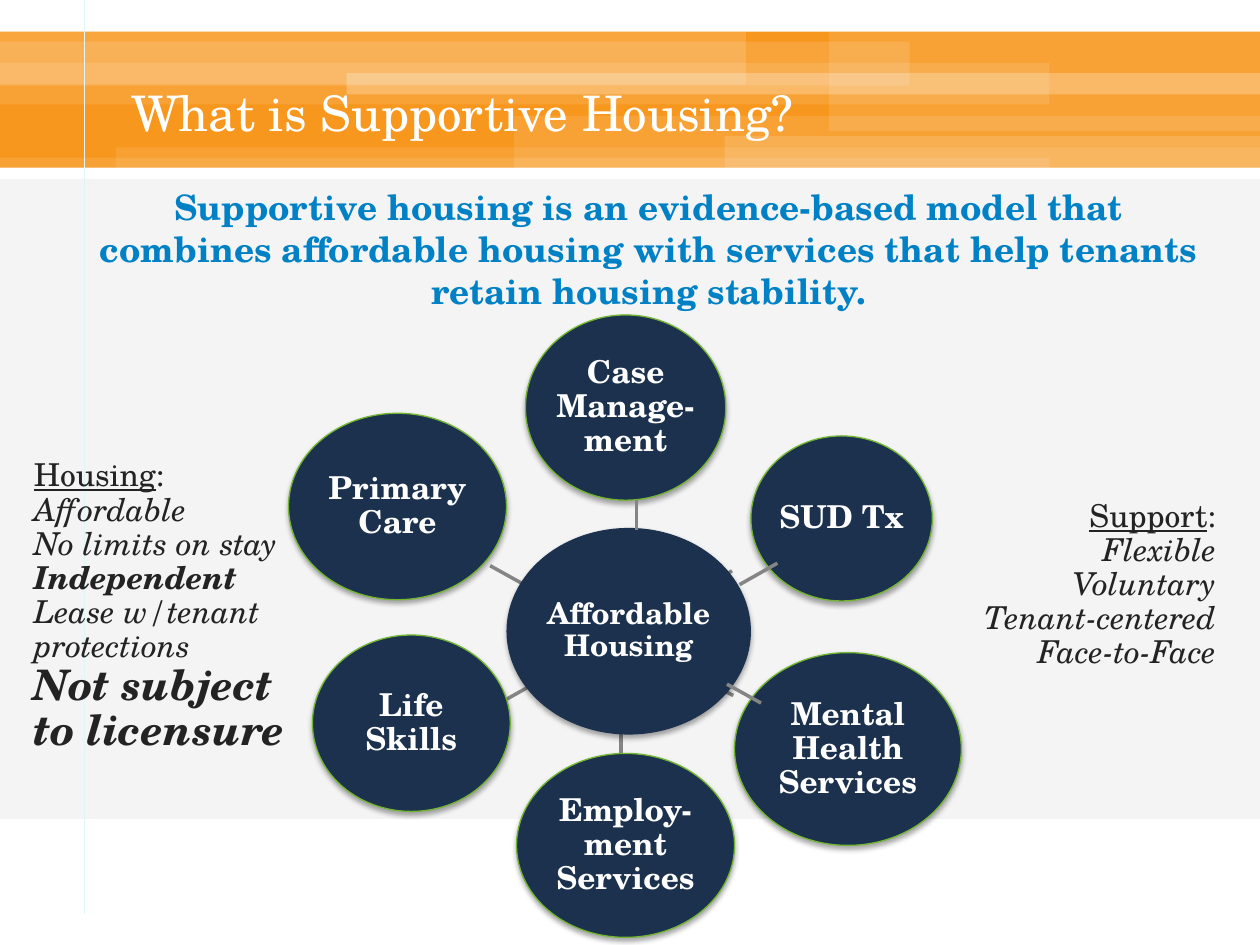
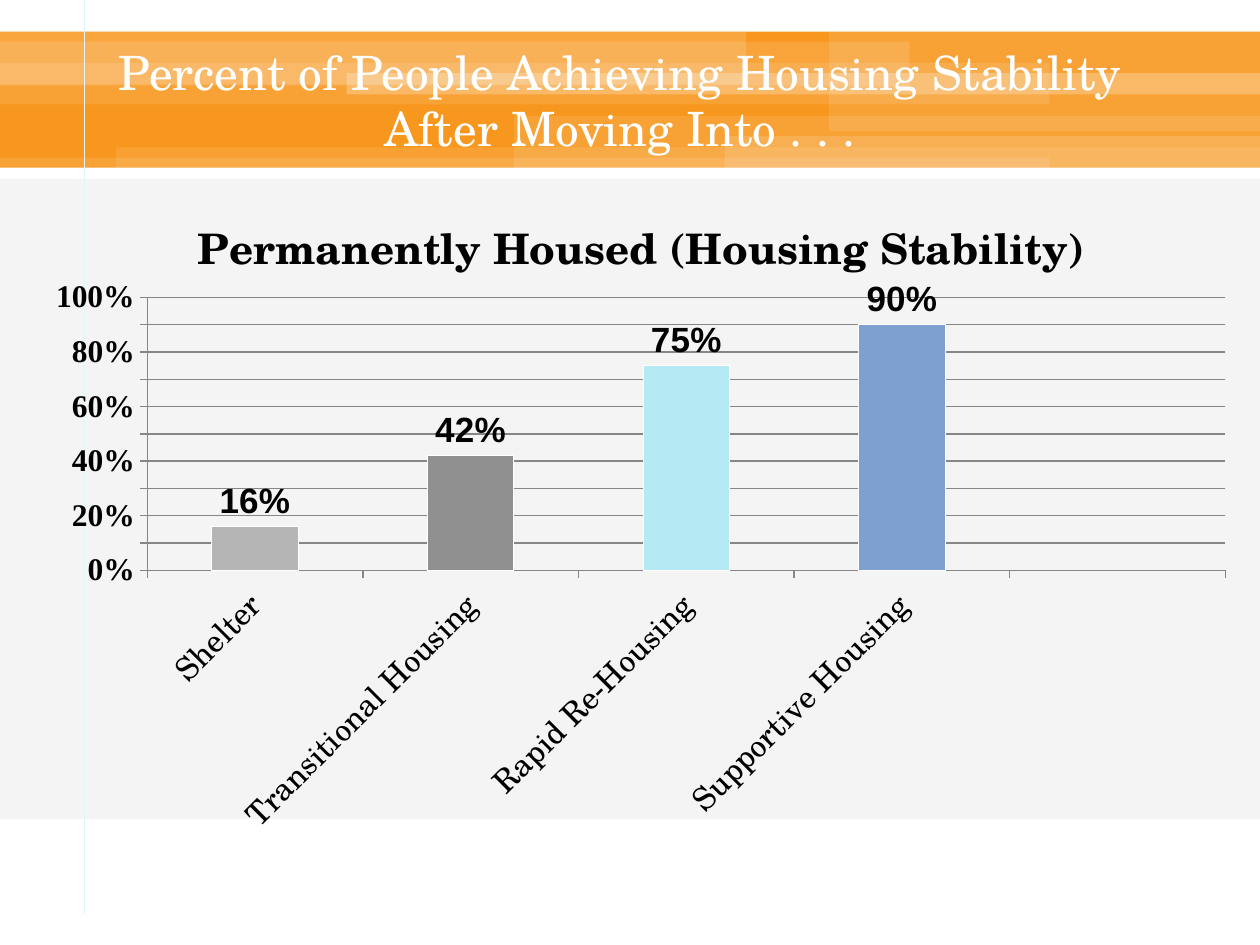
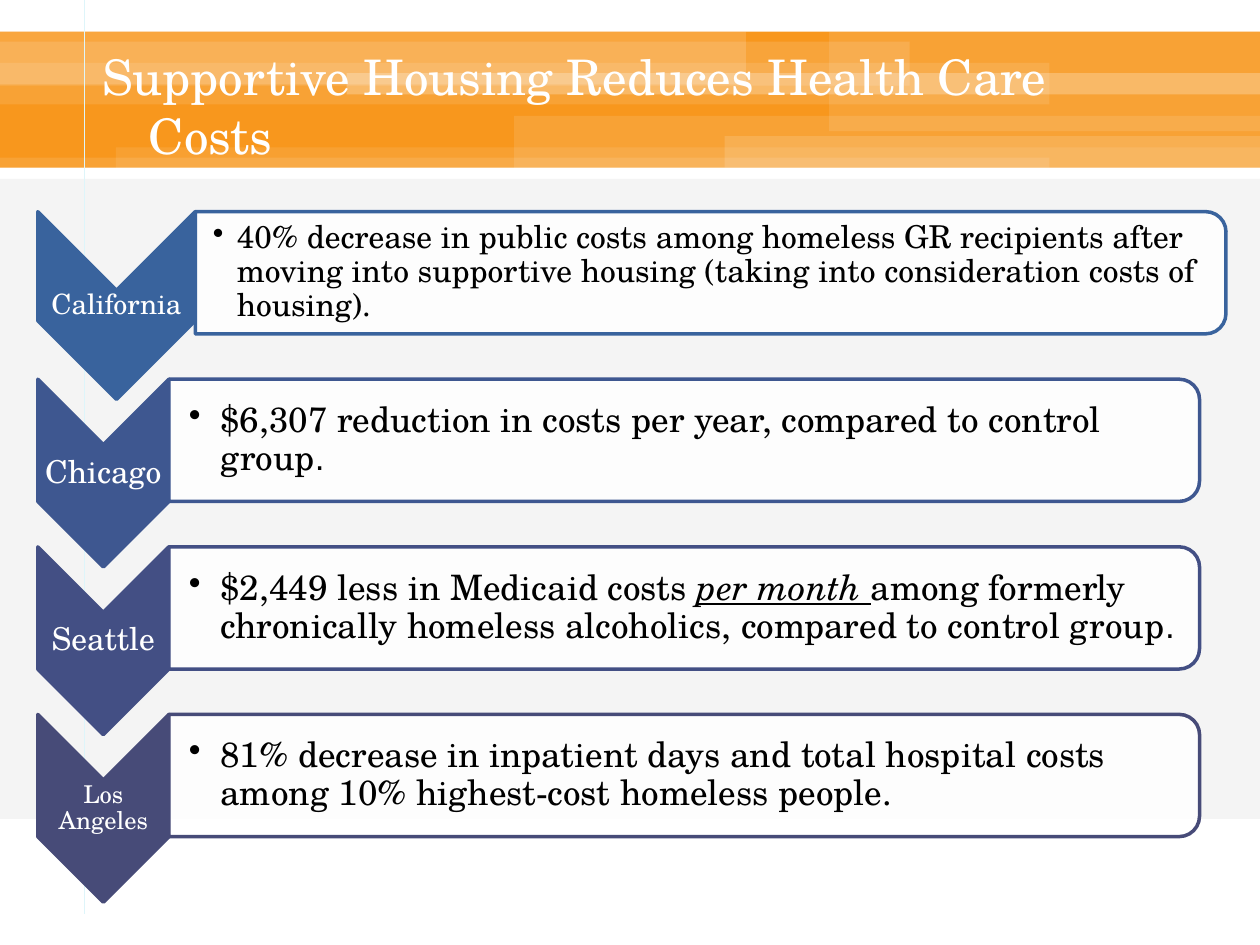
from dataclasses import dataclass
from typing import NamedTuple, Optional

from lxml.etree import SubElement
from pptx import Presentation
from pptx.chart.data import CategoryChartData
from pptx.dml.color import RGBColor
from pptx.enum.chart import XL_CHART_TYPE as ChartType
from pptx.enum.chart import XL_LABEL_POSITION as LabelPosition
from pptx.enum.chart import XL_TICK_MARK as TickMark
from pptx.enum.shapes import MSO_CONNECTOR as Connector
from pptx.enum.shapes import MSO_SHAPE as Preset
from pptx.enum.text import MSO_ANCHOR as Anchor
from pptx.enum.text import MSO_AUTO_SIZE as AutoSize
from pptx.enum.text import PP_ALIGN as Align
from pptx.oxml.ns import qn
from pptx.util import Inches, Pt


@dataclass(frozen=True)
class Theme:
    face: str = "TeX Gyre Schola"
    label_face: str = "Arial"
    axis_face: str = "Times New Roman"
    white: str = "FFFFFF"
    black: str = "000000"
    ink: str = "232323"
    panel: str = "F2F2F2"
    orange: str = "F8971D"
    guide: str = "DEF5FA"
    blue: str = "0081C6"
    navy: str = "1C314E"
    green: str = "73B632"
    spoke: str = "848584"
    axis: str = "868686"
    series: str = "2DA2BF"
    bars: tuple = ("B5B5B5", "909090", "B5E9F4", "7DA0D0")
    title: float = 28
    long_title: float = 27
    large: float = 24
    lead: float = 20
    body: float = 18
    hub: float = 17
    label: float = 16
    small_label: float = 14


THEME = Theme()


class Area(NamedTuple):
    left: float
    top: float
    width: float
    height: float

    def lengths(self) -> list:
        return [Inches(value) for value in self]


class Band(NamedTuple):
    area: Area
    color: str
    opacity: int = 100


class Span(NamedTuple):
    text: str
    size: float = THEME.body
    color: str = THEME.ink
    bold: bool = False
    italic: bool = False
    underline: bool = False
    face: str = THEME.face


class Bubble(NamedTuple):
    text: str
    area: Area


class Spoke(NamedTuple):
    x1: float
    y1: float
    x2: float
    y2: float


class Finding(NamedTuple):
    place: str
    label_size: float
    chevron_width: float
    color: str
    inset: float
    indent: float
    spans: list


BANDS = [
    Band(Area(0, 1.42, 10, 5.08), THEME.panel, 83),
    Band(Area(0, 0.25, 10, 1.08), THEME.orange),
    Band(Area(0, 0.33, 7.22, 0.35), THEME.white, 13),
    Band(Area(2.75, 0.58, 7.25, 0.17), THEME.white, 25),
    Band(Area(0.92, 1.17, 9.08, 0.17), THEME.white, 9),
    Band(Area(0, 1.25, 8.33, 0.08), THEME.white, 11),
    Band(Area(0, 0.5, 8.33, 0.33), THEME.white, 11),
    Band(Area(6.58, 0.25, 3.42, 0.79), THEME.white, 11),
    Band(Area(4.08, 0.92, 5.92, 0.42), THEME.white, 11),
    Band(Area(0, 0.25, 5.92, 0.42), THEME.white, 15),
    Band(Area(5.75, 1.08, 4.25, 0.25), THEME.white, 14),
]

HUB = Bubble("Affordable Housing", Area(4.02, 4.19, 1.94, 1.64))
SERVICES = [
    Bubble("Employ-ment Services", Area(4.1, 5.98, 1.73, 1.46)),
    Bubble("Case Manage-ment", Area(4.17, 2.5, 1.59, 1.47)),
    Bubble("Primary Care", Area(2.29, 3.28, 1.73, 1.48)),
    Bubble("Mental Health Services", Area(5.83, 5.18, 1.8, 1.53)),
    Bubble("SUD Tx", Area(5.96, 3.46, 1.44, 1.31)),
    Bubble("Life Skills", Area(2.48, 5.04, 1.57, 1.4)),
]
BACK_SPOKES = [
    Spoke(5.7, 4.6, 5.81, 4.53),
    Spoke(5.7, 5.46, 5.82, 5.52),
    Spoke(4.93, 5.82, 4.93, 5.98),
    Spoke(4.18, 5.46, 4.02, 5.55),
    Spoke(4.16, 4.64, 3.89, 4.49),
]
FRONT_SPOKES = [
    Spoke(5.05, 3.97, 5.05, 4.21),
    Spoke(6.17, 4.47, 5.87, 4.64),
    Spoke(6.04, 5.58, 5.77, 5.43),
]

HOUSING = [
    [Span("Housing", underline=True), Span(": "), Span("Affordable", italic=True)],
    [Span("No limits on stay", italic=True)],
    [Span("Independent", bold=True, italic=True)],
    [Span("Lease w/tenant protections", italic=True)],
    [Span("Not subject to licensure", THEME.large, bold=True, italic=True)],
]
SUPPORT = [[Span("Support", underline=True), Span(":")]] + [
    [Span(text, italic=True)]
    for text in ("Flexible", "Voluntary", "Tenant-centered", "Face-to-Face")
]

LEAD = (THEME.lead, THEME.black)
FULL_STOP = Span(".", *LEAD, face=THEME.label_face)
FINDINGS = [
    Finding("California", THEME.label, 1.25, "39639D", 0.14, 0.19, [
        Span("40% decrease in public costs among homeless GR recipients after moving "
             "into supportive housing (taking into consideration costs of housing).",
             THEME.body, THEME.black)]),
    Finding("Chicago", THEME.body, 1.04, "3E5790", 0.16, 0.25, [
        Span("$6,307 reduction in costs per year, compared to control group", *LEAD),
        FULL_STOP]),
    Finding("Seattle", THEME.body, 1.04, "434F84", 0.16, 0.25, [
        Span("$2,449 less in Medicaid costs ", *LEAD),
        Span("per month ", *LEAD, italic=True, underline=True),
        Span("among formerly chronically homeless alcoholics, "
             "compared to control group", *LEAD),
        FULL_STOP]),
    Finding("Los Angeles", THEME.small_label, 1.04, "474B78", 0.16, 0.25, [
        Span("81% decrease in inpatient days and total hospital costs "
             "among 10% highest-cost homeless people.", *LEAD)]),
]


def rgb(color: str) -> RGBColor:
    return RGBColor.from_string(color)


def style_font(font, face: str, size: float, color: str, bold: bool = False) -> None:
    font.name, font.size, font.bold = face, Pt(size), bold
    font.color.rgb = rgb(color)


def write(para, spans: list, align=Align.LEFT, spacing: Optional[float] = None) -> None:
    para.alignment = align
    if spacing:
        para.line_spacing = spacing
    for span in spans:
        run = para.add_run()
        run.text = span.text
        style_font(run.font, span.face, span.size, span.color, span.bold)
        run.font.italic = span.italic
        run.font.underline = span.underline


def set_indent(para, margin: float, first: float) -> None:
    props = para._p.get_or_add_pPr()
    props.set("marL", str(Inches(margin)))
    props.set("indent", str(Inches(first)))


def set_margins(frame, left: float, top: float, right: float, bottom: float) -> None:
    frame.margin_left, frame.margin_top = Inches(left), Inches(top)
    frame.margin_right, frame.margin_bottom = Inches(right), Inches(bottom)


def add_box(page, area: Area, paragraphs: list, align=Align.LEFT,
            spacing: Optional[float] = None):
    frame = page.shapes.add_textbox(*area.lengths()).text_frame
    frame.word_wrap = True
    for index, spans in enumerate(paragraphs):
        para = frame.add_paragraph() if index else frame.paragraphs[0]
        write(para, spans, align, spacing)
    return frame


def add_preset(page, preset, area: Area, fill: str, opacity: int = 100,
               line: Optional[str] = None, weight: float = 0):
    shape = page.shapes.add_shape(preset, *area.lengths())
    shape.shadow.inherit = False
    shape.fill.solid()
    shape.fill.fore_color.rgb = rgb(fill)
    if opacity < 100:
        color = shape.element.spPr.find(qn("a:solidFill"))[0]
        SubElement(color, qn("a:alpha"), val=str(opacity * 1000))
    if line:
        shape.line.color.rgb = rgb(line)
        shape.line.width = Pt(weight)
    else:
        shape.line.fill.background()
    return shape


def add_line(page, spoke: Spoke, color: str, weight: float):
    ends = [Inches(value) for value in spoke]
    line = page.shapes.add_connector(Connector.STRAIGHT, *ends)
    line.line.color.rgb = rgb(color)
    line.line.width = Pt(weight)
    SubElement(line.element.spPr, qn("a:effectLst"))
    return line


def add_bubble(page, bubble: Bubble, size: float, line: Optional[str] = None) -> None:
    shape = add_preset(page, Preset.OVAL, bubble.area, THEME.navy, line=line, weight=0.75)
    effects = shape.element.spPr.find(qn("a:effectLst"))
    shadow = SubElement(effects, qn("a:outerShdw"), blurRad=str(Pt(3.1)),
                        dist=str(Pt(1.8)), dir="5400000", rotWithShape="0")
    color = SubElement(shadow, qn("a:srgbClr"), val=THEME.black)
    SubElement(color, qn("a:alpha"), val="35000")
    frame = shape.text_frame
    frame.word_wrap = True
    frame.vertical_anchor = Anchor.MIDDLE
    set_margins(frame, 0, 0, 0, 0)
    write(frame.paragraphs[0], [Span(bubble.text, size, THEME.white, bold=True)],
          Align.CENTER, 0.9)


def add_title(page, text: str, area: Area, size: float, align=Align.LEFT):
    title = page.shapes.title
    title.left, title.top, title.width, title.height = area.lengths()
    frame = title.text_frame
    frame.word_wrap = True
    frame.auto_size = AutoSize.NONE
    frame.vertical_anchor = Anchor.MIDDLE
    write(frame.paragraphs[0], [Span(text, size, THEME.white)], align)
    if align == Align.LEFT:
        set_indent(frame.paragraphs[0], 0.5, -0.37)
    return frame


def dress_layout(layout, page) -> None:
    for holder in list(layout.placeholders)[1:]:
        layout.shapes.element.remove(holder.element)
    parts = [add_preset(page, Preset.RECTANGLE, *band) for band in BANDS]
    parts.append(add_line(page, Spoke(0.67, 0, 0.67, 7.25), THEME.guide, 0.25))
    for index, part in enumerate(parts, start=2):
        layout.shapes.element.insert(index, part.element)


def build_model_page(page) -> None:
    add_title(page, "What is Supportive Housing?", Area(0.81, 0.6, 7.48, 0.58), THEME.title)
    statement = add_box(page, Area(0.44, 1.42, 9.29, 1.45), [[
        Span("Supportive housing is an evidence-based model that combines affordable "
             "housing with services that help tenants retain housing stability.",
             THEME.lead, THEME.blue, bold=True)]], Align.CENTER)
    set_indent(statement.paragraphs[0], 0.13, 0)
    add_box(page, Area(0.17, 3.6, 2.35, 2.46), HOUSING, spacing=0.9)
    add_box(page, Area(7.49, 3.92, 2.26, 1.46), SUPPORT, Align.RIGHT, 0.9)
    for spoke in BACK_SPOKES:
        add_line(page, spoke, THEME.spoke, 2)
    for bubble in SERVICES:
        add_bubble(page, bubble, THEME.body, THEME.green)
    add_bubble(page, HUB, THEME.hub)
    for spoke in FRONT_SPOKES:
        add_line(page, spoke, THEME.spoke, 2)


def add_layout(parent, index: int, **values: float) -> None:
    for old in parent.findall(qn("c:layout")):
        parent.remove(old)
    layout = parent.makeelement(qn("c:layout"))
    parent.insert(index, layout)
    manual = SubElement(layout, qn("c:manualLayout"))
    if "w" in values:
        SubElement(manual, qn("c:layoutTarget"), val="inner")
    for side in ("xMode", "yMode"):
        SubElement(manual, qn(f"c:{side}"), val="edge")
    for name, value in values.items():
        SubElement(manual, qn(f"c:{name}"), val=str(value))


def build_chart_page(page) -> None:
    frame = add_title(page, "Percent of People Achieving Housing Stability "
                      "After Moving Into . . .", Area(0.42, 0.25, 9, 1.08),
                      THEME.long_title, Align.CENTER)
    set_margins(frame, 0.1, 0.06, 0.1, 0.06)
    data = CategoryChartData(number_format="0%")
    data.categories = ["Shelter", "Transitional Housing", "Rapid Re-Housing",
                       "Supportive Housing", ""]
    data.add_series("Series 1", [0.16, 0.42, 0.75, 0.9, None])
    area = Area(0.25, 1.33, 9.67, 5.42)
    chart = page.shapes.add_chart(ChartType.COLUMN_CLUSTERED, *area.lengths(), data).chart
    style_font(chart.font, THEME.label_face, 10, THEME.black)
    chart.has_legend = False
    chart.has_title = True
    heading = chart.chart_title
    write(heading.text_frame.paragraphs[0],
          [Span("Permanently Housed (Housing Stability)", THEME.large, THEME.black, bold=True)],
          Align.CENTER)
    add_layout(heading._element, 1, x=0.13, y=0.05)
    add_layout(chart._chartSpace.chart.plotArea, 0, x=0.095, y=0.19, w=0.885, h=0.4)

    values, places = chart.value_axis, chart.category_axis
    style_font(values.tick_labels.font, THEME.axis_face, THEME.body, THEME.black, True)
    style_font(places.tick_labels.font, THEME.face, THEME.body, THEME.black)
    places._element.find(qn("c:txPr")).find(qn("a:bodyPr")).set("rot", "-2700000")
    values.minimum_scale, values.maximum_scale, values.major_unit = 0, 1, 0.1
    values.tick_labels.number_format = "0%"
    values.tick_labels.number_format_is_linked = False
    values.has_major_gridlines = True
    values.major_gridlines.format.line.color.rgb = rgb(THEME.axis)
    for axis in (values, places):
        axis.major_tick_mark = TickMark.OUTSIDE
        axis.format.line.color.rgb = rgb(THEME.axis)

    plot = chart.plots[0]
    plot.vary_by_categories = False
    plot.gap_width = 150
    series = plot.series[0]
    series.format.fill.solid()
    series.format.fill.fore_color.rgb = rgb(THEME.series)
    for index, color in enumerate(THEME.bars):
        bar = series.points[index].format
        bar.fill.solid()
        bar.fill.fore_color.rgb = rgb(color)
        bar.line.color.rgb = rgb(THEME.white)
    labels = series.data_labels
    labels.show_value = True
    labels.position = LabelPosition.OUTSIDE_END
    labels.number_format = "0%"
    labels.number_format_is_linked = False
    style_font(labels.font, THEME.label_face, THEME.lead, THEME.black, True)


def turned(area: Area) -> Area:
    shift = (area.width - area.height) / 2
    return Area(area.left + shift, area.top - shift, area.height, area.width)


def add_finding(page, finding: Finding, top: float) -> None:
    left, card_width, card_height, chevron_height = 0.3, 8.18, 0.97, 1.49
    chevron = Area(left, top, finding.chevron_width, chevron_height)
    card = Area(left + finding.chevron_width, top, card_width, card_height)
    add_preset(page, Preset.CHEVRON, turned(chevron), finding.color,
               line=finding.color, weight=2).rotation = 90
    label = add_box(page, chevron, [[Span(finding.place, finding.label_size, THEME.white)]],
                    Align.CENTER, 0.9)
    add_preset(page, Preset.ROUND_2_SAME_RECTANGLE, turned(card), THEME.white, 90,
               finding.color, 2).rotation = 90
    inner = Area(card.left, top + 0.05, card_width - 0.05, card_height - 0.1)
    detail = add_box(page, inner, [finding.spans], spacing=0.9)
    para = detail.paragraphs[0]
    set_indent(para, finding.indent, -finding.indent)
    SubElement(para._p.get_or_add_pPr(), qn("a:buChar"), char="•")
    for frame, inset in ((label, 0.01), (detail, finding.inset)):
        frame.vertical_anchor = Anchor.MIDDLE
        set_margins(frame, inset, 0.01, 0.01, 0.01)


def build_costs_page(page) -> None:
    add_title(page, "Supportive Housing Reduces Health Care Costs",
              Area(0.58, 0.44, 8.49, 0.79), THEME.title)
    for index, finding in enumerate(FINDINGS):
        add_finding(page, finding, 1.68 + 1.33 * index)


def main() -> None:
    deck = Presentation()
    deck.slide_width, deck.slide_height = Inches(10), Inches(7.5)
    layout = deck.slide_layouts[5]
    builders = (build_model_page, build_chart_page, build_costs_page)
    pages = [deck.slides.add_slide(layout) for _ in builders]
    dress_layout(layout, pages[0])
    for build, page in zip(builders, pages):
        build(page)
    deck.save("out.pptx")


if __name__ == "__main__":
    main()
